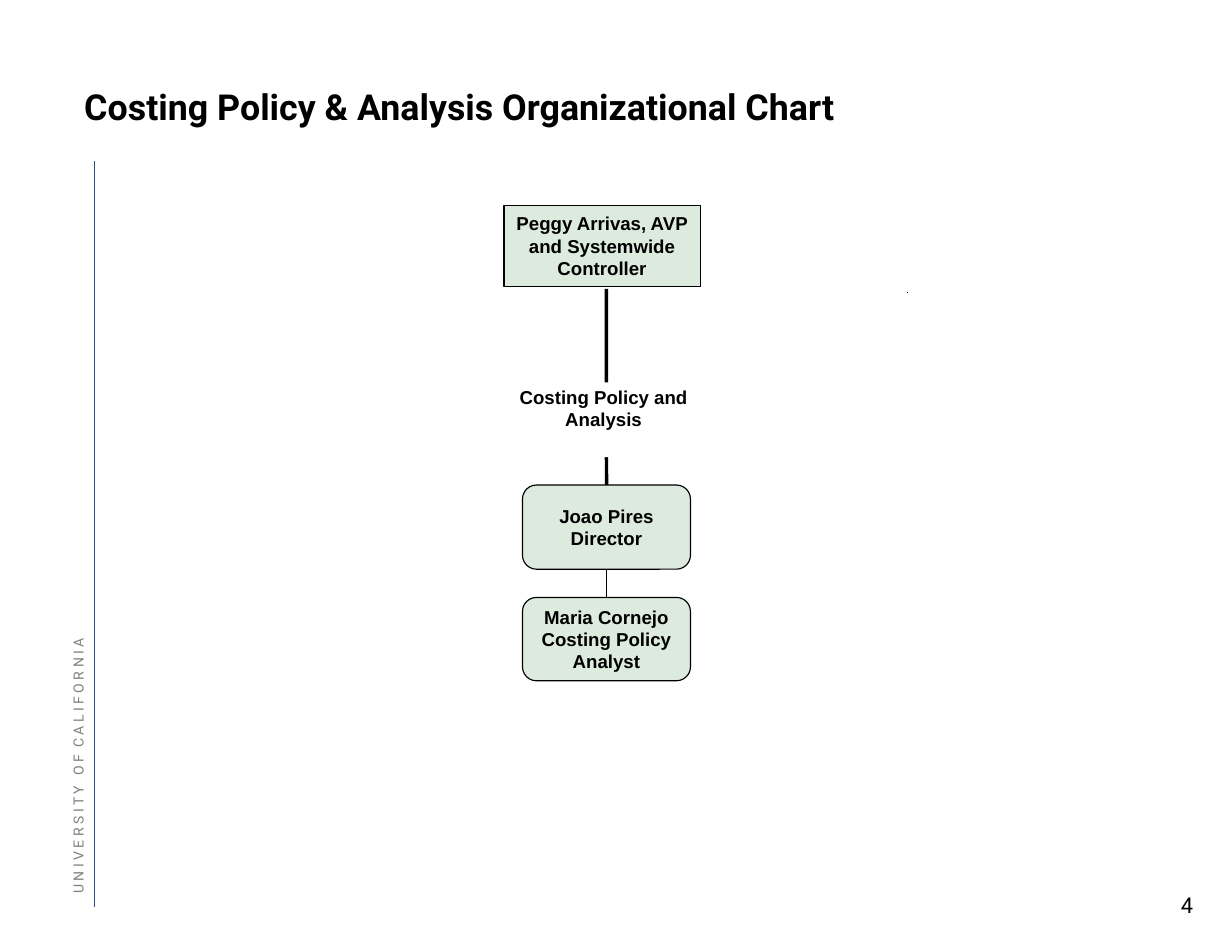
from pptx import Presentation
from pptx.dml.color import RGBColor
from pptx.enum.shapes import MSO_CONNECTOR, MSO_SHAPE
from pptx.enum.text import MSO_ANCHOR, MSO_AUTO_SIZE, PP_ALIGN
from pptx.oxml.ns import qn
from pptx.util import Cm, Pt

RECT, ROUNDED = MSO_SHAPE.RECTANGLE, MSO_SHAPE.ROUNDED_RECTANGLE
LEFT, CENTER, RIGHT = PP_ALIGN.LEFT, PP_ALIGN.CENTER, PP_ALIGN.RIGHT
TOP, MIDDLE, BOTTOM = MSO_ANCHOR.TOP, MSO_ANCHOR.MIDDLE, MSO_ANCHOR.BOTTOM
STRAIGHT = MSO_CONNECTOR.STRAIGHT
SIDE_TOP, SIDE_BOTTOM = 0, 2

# Content
TITLE = "Costing Policy & Analysis Organizational Chart"
# words of the side label, each with the extra gap after it in points
SIDE_LABEL = [("UNIVERSITY", 4.4), ("OF", 2.2), ("CALIFORNIA", 0)]
PAGE = "4"
GREEN, WHITE, BLACK, GRAY, BLUE = "DCEBDD", "FFFFFF", "000000", "808080", "264E84"

# name: (shape, left, top, width, height in cm, fill, line, anchor, paragraphs)
BOXES = {
    "controller": (RECT, 11.43, 4.66, 4.45, 1.83, GREEN, BLACK, MIDDLE,
                   ["Peggy Arrivas, AVP and Systemwide Controller"]),
    "department": (RECT, 11.43, 8.67, 4.52, 1.7, WHITE, None, TOP,
                   ["Costing Policy and Analysis"]),
    "director": (ROUNDED, 11.85, 11, 3.81, 1.91, GREEN, BLACK, MIDDLE,
                 ["Joao Pires", "Director"]),
    "analyst": (ROUNDED, 11.85, 13.55, 3.81, 1.89, GREEN, BLACK, MIDDLE,
                ["Maria Cornejo", "Costing Policy Analyst"]),
}


def color(value):
    return RGBColor.from_string(value)


def add_run(p, text, size, font, ink, bold):
    r = p.add_run()
    r.text = text
    r.font.size, r.font.name, r.font.bold = Pt(size), font, bold
    r.font.color.rgb = color(ink)
    return r


def write(sp, lines, size, font, ink=BLACK, bold=False, align=LEFT, anchor=TOP,
          inset=None):
    tf = sp.text_frame
    tf.auto_size = MSO_AUTO_SIZE.NONE
    tf.word_wrap = True
    tf.vertical_anchor = anchor
    if inset is not None:
        tf.margin_left = tf.margin_right = Cm(inset[0])
        tf.margin_top = tf.margin_bottom = Cm(inset[1])
    for i, line in enumerate(lines):
        p = tf.add_paragraph() if i else tf.paragraphs[0]
        p.alignment = align
        add_run(p, line, size, font, ink, bold)
    return tf


def add_line(s, x1, y1, x2, y2, width, ink=BLACK):
    line = s.shapes.add_connector(STRAIGHT, Cm(x1), Cm(y1), Cm(x2), Cm(y2))
    line.line.width = Pt(width)
    line.line.color.rgb = color(ink)
    properties = line._element.spPr
    properties.append(properties.makeelement(qn("a:effectLst"), {}))
    return line


def add_box(s, kind, left, top, width, height, fill, ink, anchor, lines):
    sp = s.shapes.add_shape(kind, Cm(left), Cm(top), Cm(width), Cm(height))
    sp.shadow.inherit = False
    sp.fill.solid()
    sp.fill.fore_color.rgb = color(fill)
    if ink:
        sp.line.color.rgb = color(ink)
        sp.line.width = Pt(0.75)
    else:
        sp.line.fill.background()
    write(sp, lines, 12, "Arial", bold=True, align=CENTER, anchor=anchor,
          inset=(0.25, 0.08 if anchor == TOP else 0.13))
    return sp


def main():
    prs = Presentation()
    prs.slide_width, prs.slide_height = Cm(27.94), Cm(21.59)
    s = prs.slides.add_slide(prs.slide_layouts[5])

    # Title
    title = s.shapes.title
    title.left, title.top, title.width, title.height = Cm(1.91), Cm(1.9), Cm(24.13), Cm(1.47)
    tf = write(title, [TITLE], 23, "Roboto", bold=True, inset=(0, 0))
    tf.paragraphs[0].line_spacing = Pt(27.9)

    # Page frame: side rule, page number, vertical label
    add_line(s, 2.13, 3.66, 2.13, 20.57, 0.35, BLUE)
    number = s.shapes.add_textbox(Cm(26.04), Cm(20.1), Cm(1.27), Cm(0.86))
    write(number, [PAGE], 14, "Roboto", align=RIGHT)
    label = s.shapes.add_textbox(Cm(-3.73), Cm(14.58), Cm(11), Cm(0.38))
    label.rotation = 270
    tf = write(label, [], 9, "Roboto", anchor=BOTTOM, inset=(0, 0))
    p = tf.paragraphs[0]
    p.line_spacing = Pt(12)
    for word, gap in SIDE_LABEL:
        add_run(p, " ".join(word), 9, "Roboto", GRAY, False)
        if gap:
            r = add_run(p, " ", 9, "Roboto", GRAY, False)
            r.font._element.set("spc", str(round(gap * 100)))

    # Organization chart: the trunk runs behind the department box
    trunk = add_line(s, 13.75, 6.55, 13.75, 11, 2.25)
    boxes = {name: add_box(s, *box) for name, box in BOXES.items()}
    trunk.end_connect(boxes["director"], SIDE_TOP)
    report = add_line(s, 13.75, 12.91, 13.75, 13.55, 0.75)
    report.begin_connect(boxes["director"], SIDE_BOTTOM)
    report.end_connect(boxes["analyst"], SIDE_TOP)

    # Small dot at the right
    add_line(s, 20.57, 6.63, 20.59, 6.63, 0.75)

    prs.save("out.pptx")


if __name__ == "__main__":
    main()
